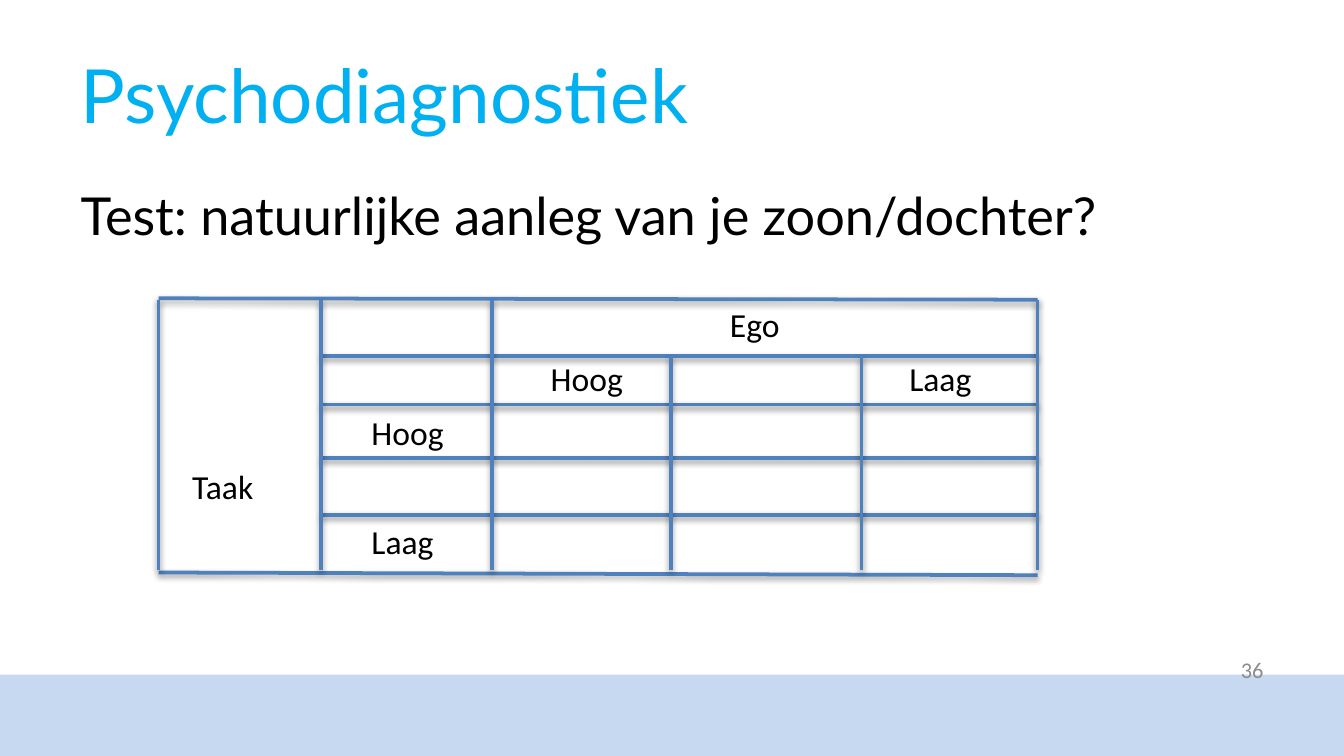
"""Build the slide with the task and ego table."""
from lxml.etree import SubElement
from pptx import Presentation
from pptx.dml.color import RGBColor
from pptx.enum.shapes import MSO_CONNECTOR, MSO_SHAPE
from pptx.enum.text import MSO_ANCHOR, MSO_AUTO_SIZE, PP_ALIGN
from pptx.oxml.ns import qn
from pptx.util import Inches, Pt

TITLE = "Psychodiagnostiek"
QUESTION = "Test: natuurlijke aanleg van je zoon/dochter?"
PAGE_NUMBER = "36"
SCORES = [
    ["", "", "", "Ego", ""],
    ["", "", "Hoog", "", "Laag"],
    ["", "Hoog", "", "", ""],
    ["Taak", "", "", "", ""],
    ["", "Laag", "", "", ""],
]

CYAN = RGBColor(0x00, 0xB0, 0xF0)
BLACK = RGBColor(0x00, 0x00, 0x00)
WHITE = RGBColor(0xFF, 0xFF, 0xFF)
GRAY = RGBColor(0x8C, 0x8C, 0x8C)
BLUE = RGBColor(0x4F, 0x81, 0xBD)
PALE_BLUE = RGBColor(0xC6, 0xD9, 0xF1)

TITLE_FORMAT = {"name": "Lato", "size": Pt(40), "color": CYAN}
QUESTION_FORMAT = {"name": "Lato", "size": Pt(28), "color": BLACK}
CELL_FORMAT = {"name": "Calibri", "size": Pt(18), "color": BLACK}
NUMBER_FORMAT = {"name": "Calibri", "size": Pt(12), "color": GRAY}

WIDTH = 10
HEIGHT = WIDTH * 9 / 16
MARGIN = 0.05 * WIDTH
BAND_TOP = 5.02
TABLE_BOX = (1.33, 2.22, 6.67, 2.02)

LEFT, TASK, LEVEL, HIGH, MIDDLE, RIGHT = 1.18, 2.39, 3.66, 4.99, 6.41, 7.72
TOP, BOTTOM = 2.23, 4.24
ROW_LINES = [2.65, 3.01, 3.41, 3.83]
COLUMN_LINES = [(LEFT, TOP), (TASK, TOP), (LEVEL, TOP),
                (HIGH, ROW_LINES[0]), (MIDDLE, ROW_LINES[0]), (RIGHT, TOP)]
GRID_LINES = (
    [(TASK, y, RIGHT, y) for y in ROW_LINES]
    + [(LEFT, 4.26, RIGHT, 4.28), (LEFT, 2.22, RIGHT, 2.23)]
    + [(x, top, x, BOTTOM) for x, top in COLUMN_LINES]
)


def inches(lengths):
    return [Inches(length) for length in lengths]


def write(frame, text, formats, align=PP_ALIGN.LEFT):
    paragraph = frame.paragraphs[0]
    paragraph.text = text
    paragraph.alignment = align
    for key, value in formats.items():
        if key == "color":
            paragraph.runs[0].font.color.rgb = value
        else:
            setattr(paragraph.runs[0].font, key, value)
    return paragraph


def fit(placeholder, box):
    for side, length in zip(("left", "top", "width", "height"), inches(box)):
        setattr(placeholder, side, length)
    placeholder.text_frame.auto_size = MSO_AUTO_SIZE.NONE


def add_grid_line(slide, ends):
    line = slide.shapes.add_connector(MSO_CONNECTOR.STRAIGHT, *inches(ends))
    line.line.color.rgb = BLUE
    line.line.width = Pt(2)
    effects = SubElement(line._element.spPr, qn("a:effectLst"))
    shadow = SubElement(effects, qn("a:outerShdw"), blurRad="40000",
                        dist="20000", dir="5400000", rotWithShape="0")
    tint = SubElement(shadow, qn("a:srgbClr"), val=str(BLACK))
    SubElement(tint, qn("a:alpha"), val="38000")


def add_scores(slide):
    frame = slide.shapes.add_table(len(SCORES), len(SCORES[0]), *inches(TABLE_BOX))
    table = frame.table
    table.first_row = table.horz_banding = False
    for row, texts in enumerate(SCORES):
        for column, text in enumerate(texts):
            cell = table.cell(row, column)
            cell.fill.solid()
            cell.fill.fore_color.rgb = WHITE
            if text:
                write(cell.text_frame, text, CELL_FORMAT)


def main():
    deck = Presentation()
    deck.slide_width, deck.slide_height = inches((WIDTH, HEIGHT))
    slide = deck.slides.add_slide(deck.slide_layouts[1])

    band = slide.shapes.add_shape(
        MSO_SHAPE.RECTANGLE, *inches((0, BAND_TOP, WIDTH, HEIGHT - BAND_TOP)))
    band.shadow.inherit = False
    band.fill.solid()
    band.fill.fore_color.rgb = PALE_BLUE
    band.line.fill.background()

    title, body = slide.placeholders
    fit(title, (MARGIN, 0.23, WIDTH - 2 * MARGIN, 0.94))
    title.text_frame.vertical_anchor = MSO_ANCHOR.MIDDLE
    write(title.text_frame, TITLE, TITLE_FORMAT)

    fit(body, (MARGIN, 1.31, WIDTH - 2 * MARGIN, 2.98))
    question = write(body.text_frame, QUESTION, QUESTION_FORMAT)
    question.space_before = Pt(0)
    properties = question._p.get_or_add_pPr()
    properties.set("marL", "0")
    properties.set("indent", "0")
    SubElement(properties, qn("a:buNone"))

    number = slide.shapes.add_textbox(*inches((7.17, 4.78, 2.33, 0.4))).text_frame
    number.word_wrap = True
    number.vertical_anchor = MSO_ANCHOR.MIDDLE
    write(number, PAGE_NUMBER, NUMBER_FORMAT, PP_ALIGN.RIGHT)

    add_scores(slide)
    for ends in GRID_LINES:
        add_grid_line(slide, ends)
    deck.save("out.pptx")


if __name__ == "__main__":
    main()
